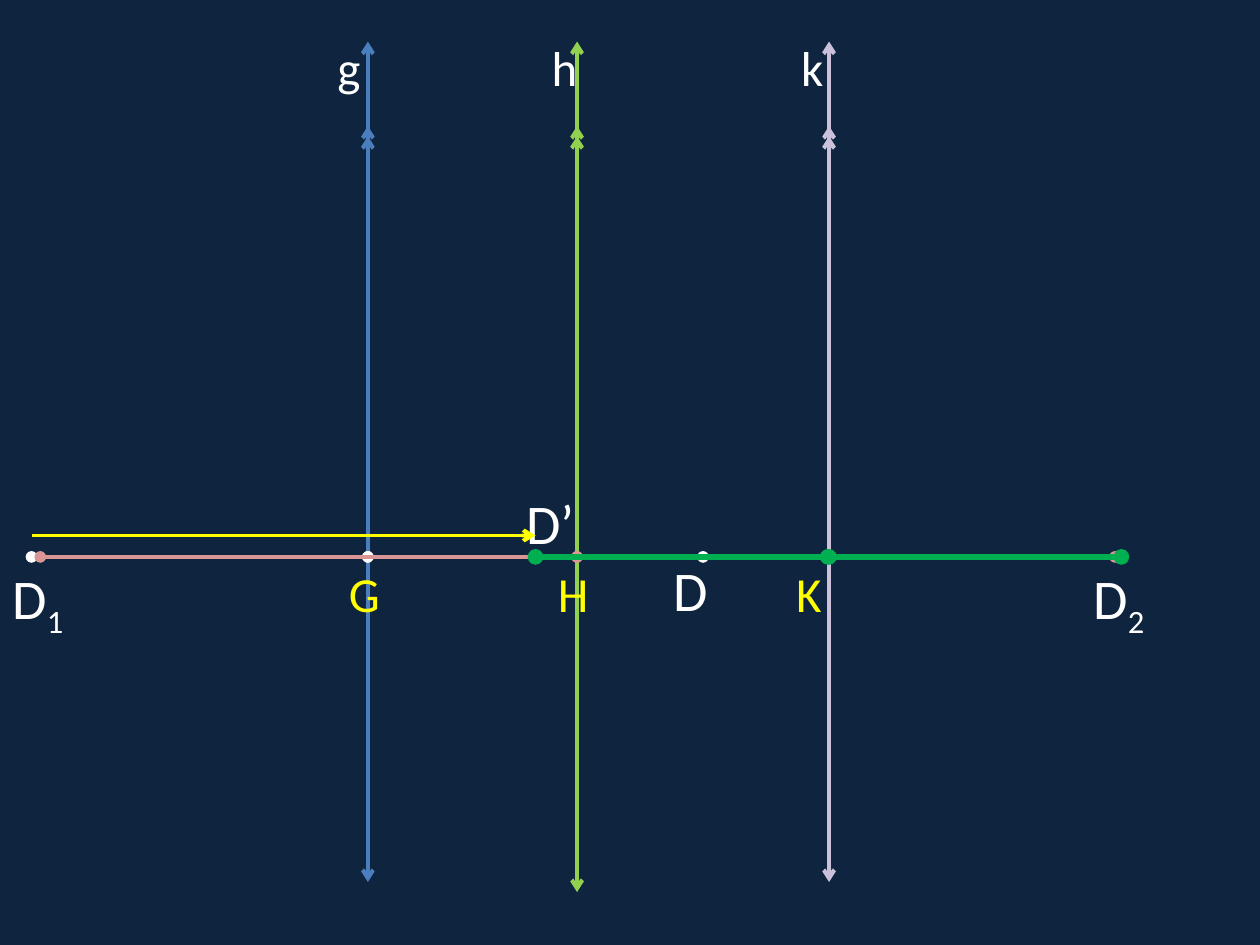
from lxml import etree
from pptx import Presentation
from pptx.dml.color import RGBColor
from pptx.enum import shapes, text
from pptx.oxml.ns import qn
from pptx.util import Inches, Pt

NAVY = RGBColor(0x0F, 0x24, 0x3E)
WHITE = RGBColor(0xFF, 0xFF, 0xFF)
YELLOW = RGBColor(0xFF, 0xFF, 0x00)
BLUE = RGBColor(0x4B, 0x7E, 0xBC)
LIME = RGBColor(0x92, 0xD0, 0x50)
LILAC = RGBColor(0xCC, 0xC1, 0xDA)
PINK = RGBColor(0xD9, 0x96, 0x94)
GREEN = RGBColor(0x00, 0xB0, 0x50)


def add_line(parent, start, end, color, width=2.25, head=None, tail=None):
    connector = parent.shapes.add_connector(
        shapes.MSO_CONNECTOR.STRAIGHT, *map(Inches, start + end))
    connector.line.color.rgb = color
    connector.line.width = Pt(width)
    outline = connector.line._get_or_add_ln()
    for tag, kind in (("a:headEnd", head), ("a:tailEnd", tail)):
        if kind:
            etree.SubElement(outline, qn(tag), type=kind)
    etree.SubElement(connector._element.spPr, qn("a:effectLst"))


def add_label(left, top, width, height, letter, size, color, subscript=""):
    box = slide.shapes.add_textbox(*map(Inches, (left, top, width, height)))
    frame = box.text_frame
    frame.word_wrap = False
    frame.auto_size = text.MSO_AUTO_SIZE.SHAPE_TO_FIT_TEXT
    paragraph = frame.paragraphs[0]
    paragraph.text = letter
    if subscript:
        run = paragraph.add_run()
        run.text = subscript
        run._r.get_or_add_rPr().set("baseline", "-25000")
    for run in paragraph.runs:
        run.font.name = "Calibri"
        run.font.size = Pt(size)
        run.font.color.rgb = color


presentation = Presentation()
presentation.slide_width = Inches(10)
presentation.slide_height = Inches(7.5)
slide = presentation.slides.add_slide(presentation.slide_layouts[6])
slide.background.fill.solid()
slide.background.fill.fore_color.rgb = NAVY

# Parallel lines g, h and k, each with double parallel marks
for x, bottom, color in ((2.92, 7, BLUE), (4.58, 7.08, LIME), (6.58, 7, LILAC)):
    group = slide.shapes.add_group_shape()
    add_line(group, (x, 0.33), (x, bottom), color, head="arrow", tail="arrow")
    for top in (1, 1.08):
        add_line(group, (x, top), (x, top + 1.67), color, head="arrow")

# Segments on the horizontal axis, with dots at their ends
axis = 4.42
for start, end, color, width in (
    (5.58, 2.92, WHITE, 2.25),
    (2.92, 0.25, WHITE, 2.25),
    (0.32, 4.58, PINK, 2.25),
    (4.58, 8.85, PINK, 2.25),
    (8.9, 6.58, GREEN, 3),
    (6.57, 4.25, GREEN, 3),
):
    add_line(slide, (start, axis), (end, axis), color, width, "oval", "oval")

# Names of the parallel lines
for left, width, letter in ((2.58, 0.39, "g"), (4.28, 0.41, "h"), (6.26, 0.38, "k")):
    add_label(left, 0.25, width, 0.57, letter, 28, WHITE)

# Names of the crossing points
for left, width, letter in ((2.67, 0.45, "G"), (4.33, 0.45, "H"), (6.22, 0.41, "K")):
    add_label(left, axis, width, 0.57, letter, 28, YELLOW)

# Names of point D and its images
for left, top, width, letter, subscript in (
    (0, axis, 0.63, "D", "1"),
    (5.25, 4.36, 0.48, "D", ""),
    (8.58, axis, 0.63, "D", "2"),
    (4.08, 3.83, 0.59, "D’", ""),
):
    add_label(left, top, width, 0.64, letter, 32, WHITE, subscript)

# Translation arrow from D1 to D'
add_line(slide, (0.25, 4.25), (4.25, 4.25), YELLOW, tail="arrow")

presentation.save("out.pptx")
